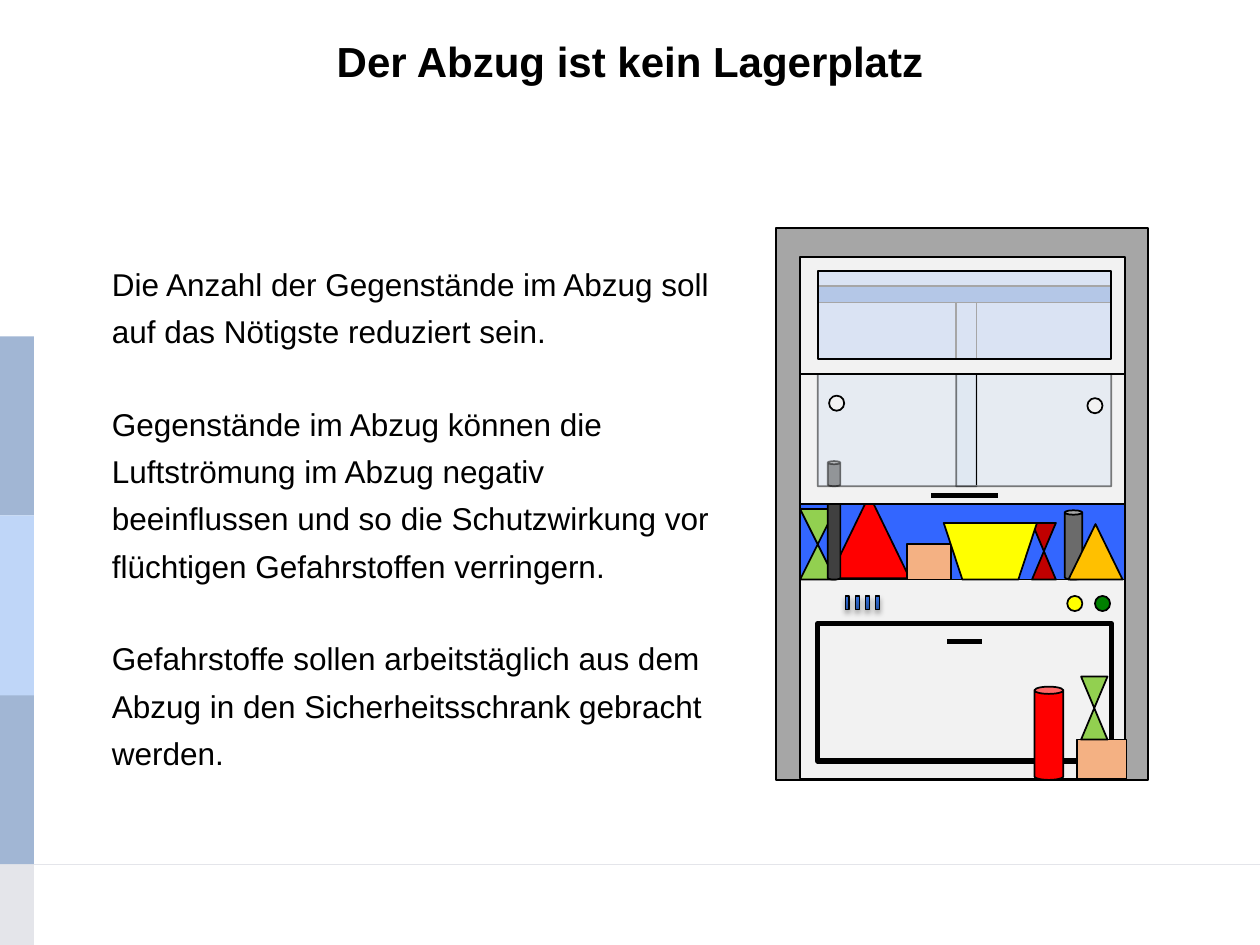
from lxml.etree import SubElement
from pptx import Presentation
from pptx.dml.color import RGBColor
from pptx.enum.shapes import MSO_CONNECTOR, MSO_SHAPE
from pptx.enum.text import MSO_ANCHOR, MSO_AUTO_SIZE, PP_ALIGN
from pptx.oxml.ns import qn
from pptx.util import Inches, Pt

RECT, CIRCLE, CAN = MSO_SHAPE.RECTANGLE, MSO_SHAPE.OVAL, MSO_SHAPE.CAN
BOX, HOURGLASS = MSO_SHAPE.FLOWCHART_PROCESS, MSO_SHAPE.FLOWCHART_COLLATE
CONE, TROUGH = MSO_SHAPE.ISOSCELES_TRIANGLE, MSO_SHAPE.FLOWCHART_MANUAL_OPERATION
BLACK, FRAME, PANEL, GLASS = "000000", "A6A6A6", "F2F2F2", "DCE6F2"
GREEN, RED, CARDBOARD, DARK = "92D050", "FF0000", "F4B183", "404040"

SIDEBAR = [
    (2.67, 1.42, "A1B6D4"),
    (5.51, 1.35, "A1B6D4"),
    (6.86, 0.64, "E4E5EA"),
    (4.09, 1.43, "BFD6F8"),
]
ADVICE = [
    "Die Anzahl der Gegenstände im Abzug soll auf das Nötigste reduziert sein.",
    "Gegenstände im Abzug können die Luftströmung im Abzug negativ beeinflussen "
    "und so die Schutzwirkung vor flüchtigen Gefahrstoffen verringern.",
    "Gefahrstoffe sollen arbeitstäglich aus dem Abzug in den Sicherheitsschrank "
    "gebracht werden.",
]
CLUTTER = [
    (BOX, 8.55, 5.87, 0.39, 0.31, CARDBOARD),
    (HOURGLASS, 8.58, 5.37, 0.21, 0.5, GREEN),
    (CAN, 8.21, 5.45, 0.23, 0.74, RED),
    (HOURGLASS, 8.19, 4.15, 0.19, 0.45, "C00000"),
    (HOURGLASS, 6.35, 4.04, 0.28, 0.56, GREEN),
    (CONE, 6.58, 3.93, 0.64, 0.66, RED),
    (CAN, 8.45, 4.05, 0.14, 0.55, "6B6B6B"),
    (BOX, 7.2, 4.32, 0.35, 0.28, CARDBOARD),
    (TROUGH, 7.49, 4.15, 0.74, 0.45, "FFFF00"),
    (CAN, 6.57, 3.65, 0.1, 0.95, DARK),
    (CONE, 8.48, 4.16, 0.43, 0.44, "FFC000"),
]


def color(hex_code):
    return RGBColor.from_string(hex_code)


def set_alpha(fill, percent):
    for tint in fill._xPr.iter(qn("a:srgbClr")):
        SubElement(tint, qn("a:alpha"), val=str(percent * 1000))


def add_part(shapes, kind, left, top, width, height, fill, line=BLACK, weight=1):
    part = shapes.add_shape(kind, Inches(left), Inches(top), Inches(width), Inches(height))
    part.shadow.inherit = False
    part.fill.solid()
    part.fill.fore_color.rgb = color(fill)
    if line:
        part.line.color.rgb = color(line)
        part.line.width = Pt(weight)
    else:
        part.line.fill.background()
    return part


def add_line(shapes, x1, y1, x2, y2, line=BLACK, weight=1):
    stroke = shapes.add_connector(
        MSO_CONNECTOR.STRAIGHT, Inches(x1), Inches(y1), Inches(x2), Inches(y2))
    stroke.line.color.rgb = color(line)
    stroke.line.width = Pt(weight)
    SubElement(stroke._element.spPr, qn("a:effectLst"))


def add_socket(shapes, left):
    socket = add_part(shapes, RECT, left, 4.73, 0.03, 0.11, "2F69D1", weight=0.75)
    socket.fill.gradient()
    socket.fill.gradient_angle = 90
    stops = socket._element.spPr.find(qn("a:gradFill")).find(qn("a:gsLst"))
    for stop in list(stops):
        stops.remove(stop)
    for position, tint in ((0, "2451A1"), (80, "2F69D1"), (100, "2C69D5")):
        stop = SubElement(stops, qn("a:gs"), pos=str(position * 1000))
        SubElement(stop, qn("a:srgbClr"), val=tint)
    effects = socket._element.spPr.find(qn("a:effectLst"))
    shadow = SubElement(effects, qn("a:outerShdw"), blurRad=str(Pt(3.1)),
                        dist=str(Pt(1.8)), dir="5400000", rotWithShape="0")
    shade = SubElement(shadow, qn("a:srgbClr"), val=BLACK)
    SubElement(shade, qn("a:alpha"), val="35000")


def add_background(slide):
    shapes = slide.shapes.add_group_shape().shapes
    (top, height, fill), *lower = SIDEBAR
    add_part(shapes, RECT, 0, top, 0.27, height, fill, None)
    add_line(shapes, 0, 6.86, 10, 6.86, "E4E5EA", 0.5)
    for top, height, fill in lower:
        add_part(shapes, RECT, 0, top, 0.27, height, fill, None)


def set_title(slide):
    title = slide.shapes.title
    title.left, title.top = Inches(1.57), Inches(0.23)
    title.width, title.height = Inches(6.86), Inches(0.5)
    title.text = "Der Abzug ist kein Lagerplatz"
    title.text_frame.auto_size = MSO_AUTO_SIZE.SHAPE_TO_FIT_TEXT
    title.text_frame.vertical_anchor = MSO_ANCHOR.TOP
    heading = title.text_frame.paragraphs[0]
    heading.alignment = PP_ALIGN.CENTER
    heading.font.name, heading.font.size, heading.font.bold = "Arial", Pt(24), True
    heading.font.color.rgb = color(BLACK)


def add_advice(slide):
    advice = slide.shapes.add_textbox(Inches(0.79), Inches(1.98), Inches(5), Inches(4.07))
    frame = advice.text_frame
    frame.word_wrap = True
    frame.auto_size = MSO_AUTO_SIZE.SHAPE_TO_FIT_TEXT
    frame.text = "\n".join(ADVICE)
    for index, paragraph in enumerate(frame.paragraphs):
        paragraph.line_spacing = 1.25
        paragraph.space_before = Pt(26 if index else 0)
        paragraph.font.name, paragraph.font.size = "Arial", Pt(18)
        paragraph.font.color.rgb = color(BLACK)


def add_base(shapes):
    add_part(shapes, RECT, 6.16, 1.81, 2.95, 4.38, FRAME)
    add_part(shapes, RECT, 6.35, 4.6, 2.58, 1.58, PANEL)
    add_part(shapes, RECT, 6.49, 4.95, 2.33, 1.09, PANEL, weight=3)
    add_line(shapes, 7.52, 5.09, 7.79, 5.09, weight=3)
    add_part(shapes, RECT, 6.35, 4, 2.58, 0.6, "3366FF")
    for left, lamp in ((8.69, "008000"), (8.47, "FFFF00")):
        add_part(shapes, CIRCLE, left, 4.73, 0.12, 0.12, lamp)
    for index in range(4):
        add_socket(shapes, 6.71 + 0.08 * index)


def add_sash(shapes):
    add_part(shapes, RECT, 6.35, 2.4, 2.58, 1.6, PANEL)
    for left, width in ((6.49, 1.26), (7.59, 1.23)):
        pane = add_part(shapes, RECT, left, 2.54, width, 1.32, GLASS)
        set_alpha(pane.fill, 50)
    for left, top in ((8.63, 3.16), (6.58, 3.14)):
        add_part(shapes, CIRCLE, left, top, 0.12, 0.12, PANEL)
    add_line(shapes, 7.39, 3.93, 7.92, 3.93, weight=3)
    add_line(shapes, 7.75, 2.53, 7.75, 3.85)


def add_upper_window(shapes):
    add_part(shapes, RECT, 6.35, 2.04, 2.58, 0.93, PANEL)
    add_part(shapes, RECT, 6.49, 2.15, 2.33, 0.7, "DAE3F3")
    for x in (7.59, 7.75):
        add_line(shapes, x, 2.39, x, 2.84, FRAME)
    add_part(shapes, RECT, 6.49, 2.27, 2.32, 0.13, "B4C7E7", None)
    can_behind_glass = add_part(shapes, CAN, 6.57, 3.66, 0.1, 0.2, DARK)
    set_alpha(can_behind_glass.fill, 50)
    set_alpha(can_behind_glass.line.fill, 50)
    for y in (2.27, 2.4):
        add_line(shapes, 8.82, y, 6.5, y, FRAME)
    for x, top in ((8.82, 2.17), (6.49, 2.18)):
        add_line(shapes, x, top, x, top + 0.45)


def add_fume_hood(slide):
    shapes = slide.shapes.add_group_shape().shapes
    add_base(shapes)
    for item in CLUTTER:
        add_part(shapes, *item)
    add_sash(shapes)
    add_upper_window(shapes)


def main():
    presentation = Presentation()
    presentation.slide_width, presentation.slide_height = Inches(10), Inches(7.5)
    slide = presentation.slides.add_slide(presentation.slide_layouts[5])
    add_background(slide)
    set_title(slide)
    add_advice(slide)
    add_fume_hood(slide)
    presentation.save("out.pptx")


if __name__ == "__main__":
    main()
